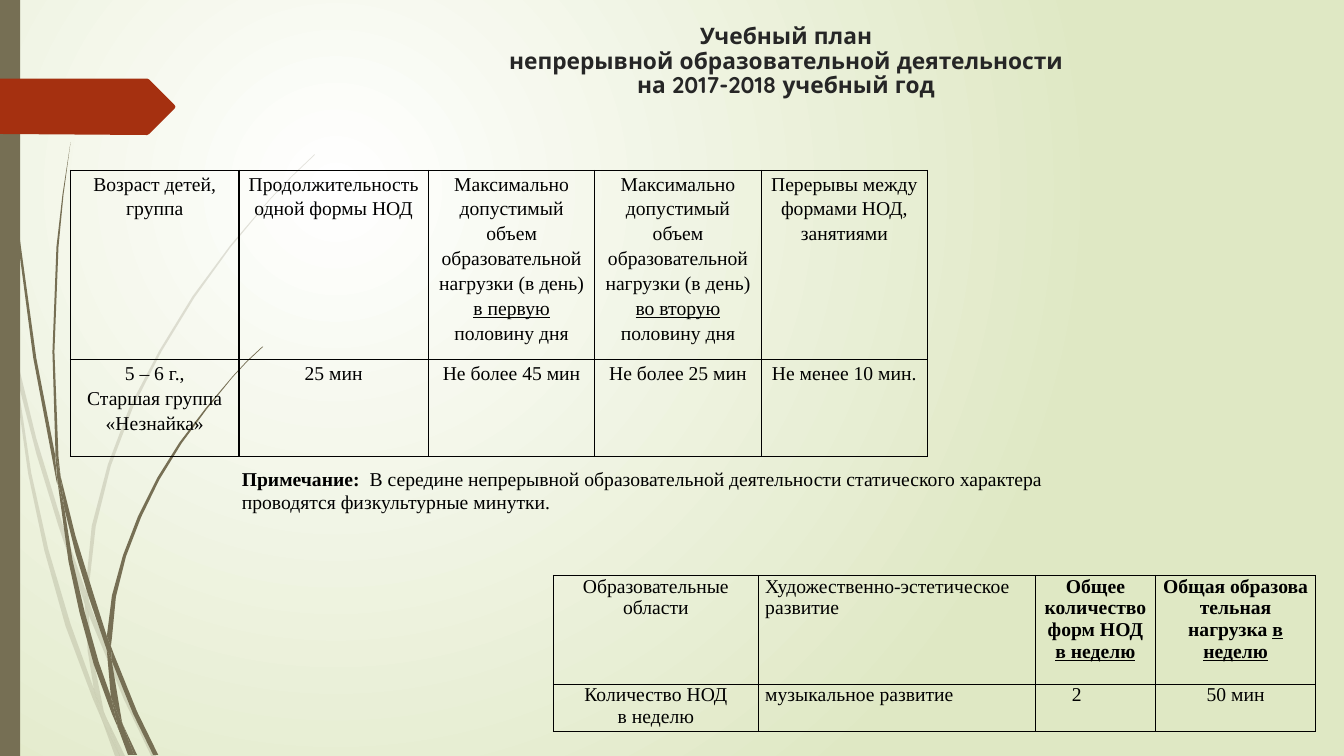
from dataclasses import dataclass
from typing import Optional

from lxml import etree
from pptx import Presentation
from pptx.dml.color import RGBColor
from pptx.enum.shapes import MSO_SHAPE
from pptx.enum.text import MSO_ANCHOR, PP_ALIGN
from pptx.oxml.ns import qn
from pptx.util import Inches, Pt

CENTER, LEFT = PP_ALIGN.CENTER, PP_ALIGN.LEFT
RECTANGLE = MSO_SHAPE.RECTANGLE
TOP, MIDDLE = MSO_ANCHOR.TOP, MSO_ANCHOR.MIDDLE
COLORS = {"white": "FFFFFF", "green": "DFE8C4", "stem": "766F54",
          "tag": "A53010", "title": "262626", "black": "000000"}
TITLE_FONT, BODY_FONT = "Quicksand", "Times New Roman"
Points = list[tuple[float, float]]


@dataclass
class Run:
    text: str
    bold: bool = False
    underline: bool = False


@dataclass
class Cell:
    paragraphs: list[list[Run]]
    align: PP_ALIGN = CENTER
    margin_left: float = 0.07


@dataclass
class Grid:
    left: float
    top: float
    columns: list[float]
    rows: list[float]
    cells: list[list[Cell]]
    line_spacing: Optional[float] = None


def plain(*lines: str, align: PP_ALIGN = CENTER, margin_left: float = 0.07) -> Cell:
    return Cell([[Run(line)] for line in lines], align, margin_left)


def daily_limit(half: str) -> Cell:
    return Cell([[Run("Максимально допустимый объем образовательной нагрузки (в день) "),
                  Run(f"{half} ", underline=True), Run("половину дня")]])


SCHEDULE = Grid(0.7, 1.69, [1.67, 1.88, 1.65, 1.65, 1.65], [1.73, 0.96], [
    [plain("Возраст детей, группа"), plain("Продолжительность одной формы НОД"),
     daily_limit("в первую"), daily_limit("во вторую"),
     plain("Перерывы между формами НОД, занятиями")],
    [plain("5 – 6 г.,", "Старшая группа", "«Незнайка»"), plain("25 мин"),
     plain("Не более 45 мин"), plain("Не более 25 мин"), plain("Не менее 10 мин.")],
], 1.15)

WEEKLY_LOAD = Grid(5.49, 5.71, [2.03, 2.75, 1.19, 1.59], [1.08, 0.47], [
    [plain("Образовательные области"),
     plain("Художественно-эстетическое развитие", align=LEFT),
     Cell([[Run("Общее количество форм НОД ", True), Run("в неделю", True, True)]]),
     Cell([[Run("Общая образова", True)],
           [Run("тельная нагрузка ", True), Run("в неделю", True, True)]])],
    [plain("Количество НОД", "в неделю"), plain("музыкальное развитие", align=LEFT),
     plain("2", align=LEFT, margin_left=0.36), plain("50 мин")],
])

PALE_STEMS: list[Points] = [
    [(0.11, 3.5), (0.09, 3.22), (0, 2.82), (0, 2.99), (0.1, 3.44)],
    [(0.58, 5.22), (0.84, 5.99), (0.85, 5.86), (0.62, 5.2), (0.36, 4.35), (0.14, 3.45),
     (0.17, 3.76), (0.36, 4.5)],
    [(0.92, 6.07), (0.88, 5.96), (0.88, 6.1), (1.23, 6.94), (1.5, 7.5), (1.55, 7.5),
     (1.27, 6.92)],
    [(1.19, 7.5), (1.24, 7.5), (1.05, 7.11)],
    [(0.93, 6.83), (0.7, 6.19), (0.48, 5.45), (0.31, 4.69), (0.17, 3.76), (0.11, 3.5),
     (0.28, 4.7), (0.44, 5.46), (0.65, 6.21), (0.92, 6.93), (1.01, 7.14), (0.99, 7.07)],
    [(0.84, 5.99), (0.87, 6.46), (0.93, 6.83), (0.96, 6.92), (1.05, 7.11), (1.03, 7.06),
     (0.91, 6.46), (0.88, 6.1), (0.88, 6.08)],
    [(0.88, 5.84), (0.95, 5.22), (1.1, 4.62), (1.32, 4.04), (1.6, 3.49), (1.93, 2.95),
     (2.29, 2.45), (2.68, 1.98), (2.9, 1.75), (3.12, 1.54), (3.12, 1.53), (2.89, 1.75),
     (2.68, 1.97), (2.28, 2.44), (1.91, 2.94), (1.58, 3.48), (1.29, 4.03), (1.07, 4.61),
     (0.91, 5.22), (0.85, 5.84), (0.85, 5.86), (0.88, 5.96)],
    [(1.01, 7.14), (1.14, 7.5), (1.19, 7.5)],
    [(0.88, 6.08), (0.88, 6.1), (0.88, 5.96), (0.85, 5.86), (0.84, 5.99)],
    [(0.96, 6.92), (0.93, 6.83), (0.99, 7.07), (1.01, 7.14), (1.19, 7.5), (1.05, 7.11)],
]

DARK_STEMS: list[Points] = [
    [(0.07, 1.1), (0.17, 2.33), (0.33, 3.55), (0.56, 4.77), (0.57, 4.81), (0.55, 4.57),
     (0.55, 4.53), (0.36, 3.55), (0.19, 2.32), (0.08, 1.09), (0.05, 0.48), (0.04, 0),
     (0.03, 0), (0.04, 0.48)],
    [(0.88, 5.92), (1.06, 6.45), (1.06, 6.31), (0.93, 5.9), (0.75, 5.32), (0.6, 4.72),
     (0.64, 5.05), (0.75, 5.49)],
    [(1.13, 6.49), (1.1, 6.41), (1.11, 6.56), (1.32, 7.08), (1.52, 7.49), (1.57, 7.49),
     (1.36, 7.06)],
    [(1.1, 6.91), (0.98, 6.57), (0.84, 6.07), (0.72, 5.56), (0.64, 5.05), (0.57, 4.77),
     (0.68, 5.57), (0.79, 6.08), (0.93, 6.59), (1.11, 7.08), (1.17, 7.22), (1.16, 7.17)],
    [(0.6, 4.72), (0.58, 4.53), (0.54, 3.49), (0.58, 2.45), (0.63, 1.93), (0.7, 1.41),
     (0.62, 1.93), (0.56, 2.45), (0.52, 3.49), (0.55, 4.49)],
    [(1.33, 7.49), (1.36, 7.49), (1.22, 7.19)],
    [(0.57, 4.77), (0.64, 5.05), (0.6, 4.72), (0.55, 4.49), (0.55, 4.53)],
    [(1.11, 6.33), (1.15, 5.92), (1.25, 5.52), (1.4, 5.13), (1.58, 4.76), (1.8, 4.4),
     (2.05, 4.06), (2.31, 3.74), (2.45, 3.59), (2.61, 3.44), (2.6, 3.44), (2.45, 3.58),
     (2.31, 3.73), (2.04, 4.05), (1.78, 4.39), (1.56, 4.74), (1.37, 5.12), (1.22, 5.51),
     (1.11, 5.91), (1.06, 6.31), (1.1, 6.41)],
    [(1.17, 7.22), (1.27, 7.49), (1.31, 7.49)],
    [(1.06, 6.45), (1.1, 6.91), (1.16, 7.06), (1.22, 7.19), (1.21, 7.16), (1.11, 6.56),
     (1.09, 6.51)],
    [(1.06, 6.45), (1.09, 6.51), (1.11, 6.56), (1.1, 6.41), (1.06, 6.31)],
    [(1.16, 7.06), (1.1, 6.91), (1.16, 7.17), (1.17, 7.22), (1.3, 7.49), (1.33, 7.49),
     (1.22, 7.19)],
]
TAG: Points = [(0, 0.78), (1.46, 0.78), (1.48, 0.79), (1.73, 1.04), (1.74, 1.06),
               (1.73, 1.08), (1.48, 1.33), (1.46, 1.34), (0, 1.33)]


def paint(shape, color: str, alpha: Optional[int] = None) -> None:
    shape.shadow.inherit = False
    shape.line.fill.background()
    shape.fill.solid()
    shape.fill.fore_color.rgb = RGBColor.from_string(COLORS[color])
    if alpha is not None:
        color_element = shape.element.spPr.find(qn("a:solidFill"))[0]
        etree.SubElement(color_element, qn("a:alpha"), val=str(alpha * 1000))


def draw_outline(shapes, points: Points, color: str, alpha: Optional[int] = None) -> None:
    corners = [(Inches(x), Inches(y)) for x, y in points]
    builder = shapes.build_freeform(*corners[0])
    builder.add_line_segments(corners[1:], close=True)
    paint(builder.convert_to_shape(), color, alpha)


def draw_background(slide) -> None:
    """Radial gradient, white in the upper left."""
    fill = slide.background.fill
    fill.gradient()
    for stop, color in zip(fill.gradient_stops, ("white", "green")):
        stop.color.rgb = RGBColor.from_string(COLORS[color])
    gradient = slide.element.find(".//" + qn("a:gradFill"))
    gradient.remove(gradient.find(qn("a:lin")))
    circle = etree.SubElement(gradient, qn("a:path"), path="circle")
    etree.SubElement(circle, qn("a:fillToRect"), l="50000", t="50000", r="100000", b="100000")


def add_run(paragraph, run: Run, size: float = 14, font: str = BODY_FONT,
            color: str = "black") -> None:
    text_run = paragraph.add_run()
    text_run.text = run.text
    text_run.font.name, text_run.font.size = font, Pt(size)
    text_run.font.bold, text_run.font.underline = run.bold, run.underline
    text_run.font.color.rgb = RGBColor.from_string(COLORS[color])


def add_text_box(slide, left: float, top: float, width: float, height: float, anchor):
    frame = slide.shapes.add_textbox(*map(Inches, (left, top, width, height))).text_frame
    frame.word_wrap = True
    frame.vertical_anchor = anchor
    return frame.paragraphs[0]


def fill_cell(table_cell, cell: Cell, line_spacing: Optional[float]) -> None:
    table_cell.margin_left, table_cell.margin_right = Inches(cell.margin_left), Inches(0.07)
    table_cell.margin_top = table_cell.margin_bottom = 0
    table_cell.fill.background()
    properties = table_cell._tc.get_or_add_tcPr()
    for index, side in enumerate(("lnL", "lnR", "lnT", "lnB")):
        border = etree.Element(qn(f"a:{side}"), w=str(Pt(1)))
        solid = etree.SubElement(border, qn("a:solidFill"))
        etree.SubElement(solid, qn("a:srgbClr"), val=COLORS["black"])
        properties.insert(index, border)
    frame = table_cell.text_frame
    for index, runs in enumerate(cell.paragraphs):
        paragraph = frame.add_paragraph() if index else frame.paragraphs[0]
        paragraph.alignment = cell.align
        paragraph.line_spacing = line_spacing
        for run in runs:
            add_run(paragraph, run)


def draw_table(slide, grid: Grid) -> None:
    table = slide.shapes.add_table(
        len(grid.rows), len(grid.columns), Inches(grid.left), Inches(grid.top),
        Inches(sum(grid.columns)), Inches(sum(grid.rows))).table
    table.first_row = table.horz_banding = False
    for column, width in zip(table.columns, grid.columns):
        column.width = Inches(width)
    for row, height, cells in zip(table.rows, grid.rows, grid.cells):
        row.height = Inches(height)
        for table_cell, cell in zip(row.cells, cells):
            fill_cell(table_cell, cell, grid.line_spacing)


def main() -> None:
    presentation = Presentation()
    presentation.slide_width, presentation.slide_height = Inches(13.33), Inches(7.5)
    slide = presentation.slides.add_slide(presentation.slide_layouts[6])
    draw_background(slide)
    for stems, alpha in ((PALE_STEMS, 20), (DARK_STEMS, None)):
        group = slide.shapes.add_group_shape()
        for stem in stems:
            draw_outline(group.shapes, stem, "stem", alpha)
    side_bar = slide.shapes.add_shape(RECTANGLE, 0, 0, Inches(0.2), Inches(7.5))
    paint(side_bar, "stem")
    draw_outline(slide.shapes, TAG, "tag")

    title = add_text_box(slide, 2.92, 0.2, 9.75, 1.4, TOP)
    title.alignment, title.line_spacing = CENTER, 0.9
    for index, line in enumerate(("Учебный план", "непрерывной образовательной деятельности",
                                  "на 2017-2018 учебный год")):
        if index:
            title.add_line_break()
        add_run(title, Run(line, bold=True), 16.2, TITLE_FONT, "title")

    draw_table(slide, SCHEDULE)
    draw_table(slide, WEEKLY_LOAD)
    note = add_text_box(slide, 2.3, 4.58, 8.97, 0.57, MIDDLE)
    add_run(note, Run("Примечание: ", bold=True))
    add_run(note, Run(" В середине непрерывной образовательной деятельности статического "
                      "характера проводятся физкультурные минутки."))
    presentation.save("out.pptx")


if __name__ == "__main__":
    main()
